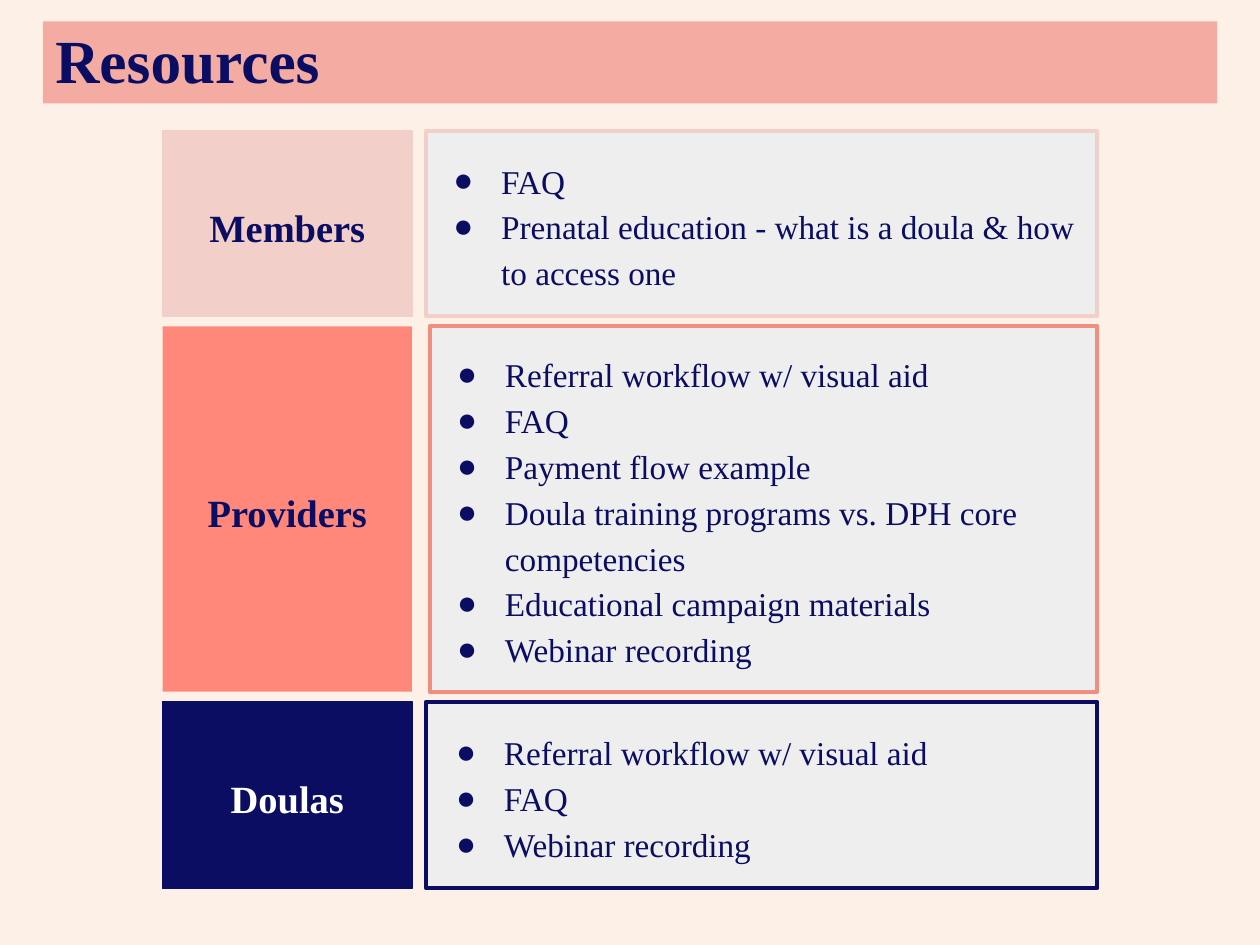
from dataclasses import dataclass

from lxml.etree import SubElement
from pptx import Presentation
from pptx.dml.color import RGBColor
from pptx.enum.shapes import MSO_SHAPE as Shape
from pptx.enum.text import MSO_ANCHOR as Anchor, PP_ALIGN as Align
from pptx.oxml.ns import qn
from pptx.util import Inches, Pt

FONT = "Times New Roman"
COLORS = {
    "background": "FDF0E6",
    "banner": "F4ABA1",
    "panel": "EEEEEE",
    "navy": "0B0D63",
    "white": "FFFFFF",
    "blush": "F2CFC9",
    "coral": "FF887B",
    "coral_edge": "F08E80",
}


@dataclass
class Audience:
    name: str
    top: float
    height: float
    fill: str
    edge: str
    label_edge: str | None
    label_color: str
    panel_left: float
    text_inset: float
    resources: list


AUDIENCES = [
    Audience("Members", 1.04, 1.47, "blush", "blush", "blush", "navy", 3.38, 0.1, [
        "FAQ",
        "Prenatal education - what is a doula & how to access one",
    ]),
    Audience("Providers", 2.59, 2.9, "coral", "coral_edge", None, "navy", 3.41, 0.1, [
        "Referral workflow w/ visual aid",
        "FAQ",
        "Payment flow example",
        "Doula training programs vs. DPH core competencies",
        "Educational campaign materials",
        "Webinar recording",
    ]),
    Audience("Doulas", 5.57, 1.48, "navy", "navy", "navy", "white", 3.38, 0.12, [
        "Referral workflow w/ visual aid",
        "FAQ",
        "Webinar recording",
    ]),
]
LABEL_LEFT, LABEL_WIDTH, PANEL_RIGHT = 1.29, 1.98, 8.71


def color(name):
    return RGBColor.from_string(COLORS[name])


def add_box(slide, box, fill, edge=None, edge_width=0.75):
    shape = slide.shapes.add_shape(Shape.RECTANGLE, *map(Inches, box))
    shape.shadow.inherit = False
    shape.fill.solid()
    shape.fill.fore_color.rgb = color(fill)
    if edge:
        shape.line.color.rgb = color(edge)
        shape.line.width = Pt(edge_width)
    else:
        shape.line.fill.background()
    return shape


def write(shape, lines, size, ink, bold=False, align=Align.LEFT, spacing=1.15,
          anchor=Anchor.MIDDLE, left_inset=0.1, vertical_inset=0.1):
    frame = shape.text_frame
    frame.word_wrap = True
    frame.vertical_anchor = anchor
    frame.margin_left, frame.margin_right = Inches(left_inset), Inches(0.1)
    frame.margin_top = frame.margin_bottom = Inches(vertical_inset)
    frame.text = "\n".join(lines)
    for paragraph in frame.paragraphs:
        paragraph.alignment = align
        paragraph.line_spacing = spacing
        font = paragraph.runs[0].font
        font.name, font.size, font.bold = FONT, Pt(size), bold
        font.color.rgb = color(ink)


def add_bullet(paragraph, ink):
    properties = paragraph._p.get_or_add_pPr()
    properties.set("marL", str(Inches(0.5)))
    properties.set("indent", str(Inches(-0.38)))
    bullet_color = SubElement(properties, qn("a:buClr"))
    SubElement(bullet_color, qn("a:srgbClr")).set("val", COLORS[ink])
    SubElement(properties, qn("a:buFont")).set("typeface", FONT)
    SubElement(properties, qn("a:buChar")).set("char", "●")


def add_title(slide, box, title):
    banner = add_box(slide, box, "banner")
    write(banner, [title], 35, "navy", bold=True, spacing=0.9,
          anchor=Anchor.BOTTOM, vertical_inset=0.05)


def add_label(slide, box, audience):
    label = add_box(slide, box, audience.fill, audience.label_edge)
    write(label, [audience.name], 22, audience.label_color, bold=True, align=Align.CENTER)


def add_panel(slide, box, audience):
    panel = add_box(slide, box, "panel", audience.edge, 2.25)
    write(panel, audience.resources, 19, "navy", left_inset=audience.text_inset)
    for paragraph in panel.text_frame.paragraphs:
        add_bullet(paragraph, "navy")


def main():
    presentation = Presentation()
    presentation.slide_width, presentation.slide_height = Inches(10), Inches(7.5)
    slide = presentation.slides.add_slide(presentation.slide_layouts[6])
    slide.background.fill.solid()
    slide.background.fill.fore_color.rgb = color("background")
    for audience in AUDIENCES:
        top, height, left = audience.top, audience.height, audience.panel_left
        add_label(slide, (LABEL_LEFT, top, LABEL_WIDTH, height), audience)
        add_panel(slide, (left, top, PANEL_RIGHT - left, height), audience)
    add_title(slide, (0.34, 0.17, 9.32, 0.65), "Resources")
    presentation.save("out.pptx")


if __name__ == "__main__":
    main()
